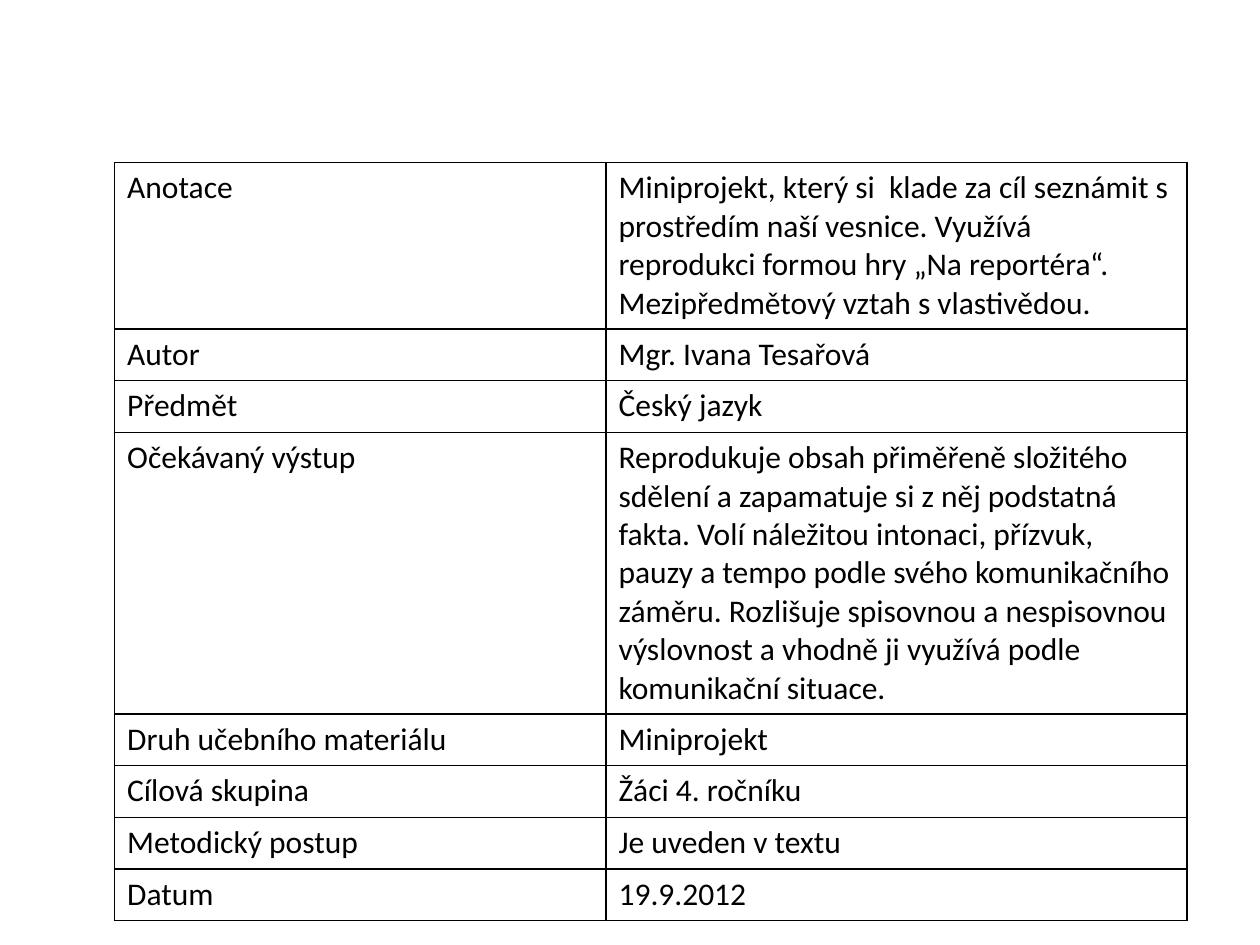
from lxml.etree import SubElement
from pptx import Presentation
from pptx.dml.color import RGBColor as RGB
from pptx.oxml.ns import qn
from pptx.util import Inches, Pt

COLORS = {"ink": "000000", "paper": "FFFFFF"}
BORDER = Pt(1)

details = [
    ("Anotace", "Miniprojekt, který si  klade za cíl seznámit s prostředím naší vesnice. "
     "Využívá reprodukci formou hry „Na reportéra“. Mezipředmětový vztah s vlastivědou."),
    ("Autor", "Mgr. Ivana Tesařová"),
    ("Předmět", "Český jazyk"),
    ("Očekávaný výstup", "Reprodukuje obsah přiměřeně složitého sdělení a zapamatuje si z něj "
     "podstatná fakta. Volí náležitou intonaci, přízvuk, pauzy a tempo podle svého "
     "komunikačního záměru. Rozlišuje spisovnou a nespisovnou výslovnost a vhodně ji "
     "využívá podle komunikační situace."),
    ("Druh učebního materiálu", "Miniprojekt"),
    ("Cílová skupina", "Žáci 4. ročníku"),
    ("Metodický postup", "Je uveden v textu"),
    ("Datum", "19.9.2012"),
]
column_widths = [Inches(3.9), Inches(4.61)]
row_height = Inches(0.41)


def add_borders(cell):
    properties = cell._tc.get_or_add_tcPr()
    for position, side in enumerate(("lnL", "lnR", "lnT", "lnB")):
        line = properties.makeelement(qn(f"a:{side}"), {"w": str(BORDER)})
        fill = SubElement(line, qn("a:solidFill"))
        SubElement(fill, qn("a:srgbClr"), val=COLORS["ink"])
        properties.insert(position, line)


prs = Presentation()
prs.slide_width, prs.slide_height = Inches(10), Inches(7.5)
slide = prs.slides.add_slide(prs.slide_layouts[6])

overview = slide.shapes.add_table(
    len(details), len(column_widths), Inches(0.91), Inches(1.29),
    sum(column_widths), row_height * len(details)).table
overview.first_row = overview.horz_banding = False
for column, width in zip(overview.columns, column_widths):
    column.width = width

for row, entry in enumerate(details):
    for col, wording in enumerate(entry):
        cell = overview.cell(row, col)
        cell.fill.solid()
        cell.fill.fore_color.rgb = RGB.from_string(COLORS["paper"])
        add_borders(cell)
        cell.text_frame.text = wording
        font = cell.text_frame.paragraphs[0].runs[0].font
        font.name, font.size = "Calibri", Pt(18)
        font.color.rgb = RGB.from_string(COLORS["ink"])

prs.save("out.pptx")
